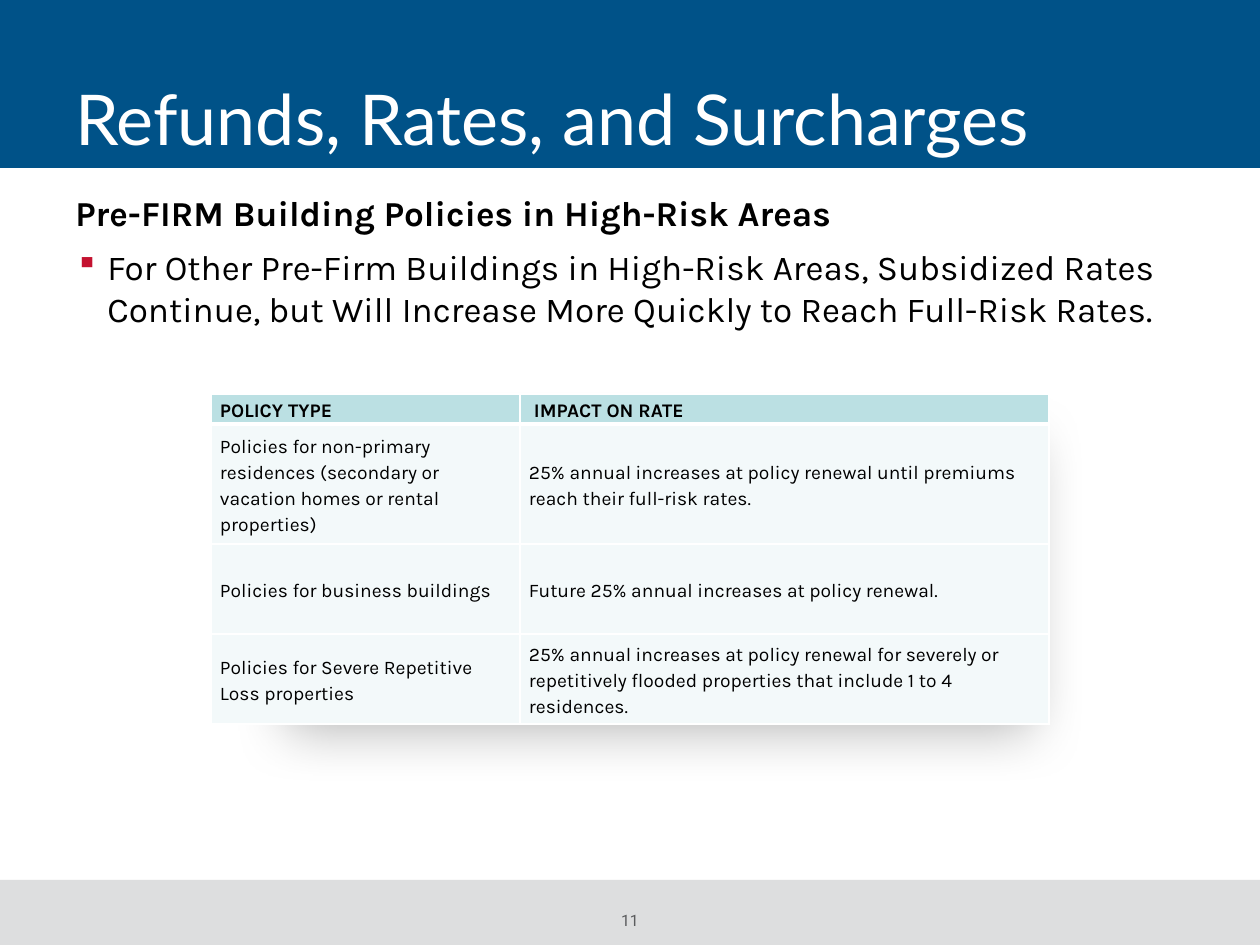
from lxml.etree import SubElement
from pptx import Presentation
from pptx.dml.color import RGBColor
from pptx.enum.shapes import MSO_SHAPE as Shape
from pptx.enum.text import MSO_ANCHOR as Anchor, PP_ALIGN as Align
from pptx.oxml import parse_xml
from pptx.oxml.ns import nsdecls, qn
from pptx.util import Emu, Pt

SCALE = 914400 / 126  # EMU per px
THEME = {
    "blue": "005288", "grey": "DDDEDF", "white": "FFFFFF", "black": "000000",
    "red": "C41230", "page": "5B5C5E", "head": "BBE0E3", "row": "F3F9FA",
    "title_size": 40, "body_size": 20, "cell_size": 11, "page_size": 9,
    "title_font": "Lato", "body_font": "Karla", "page_font": "Roboto",
}


def px(*values):
    return [Emu(round(value * SCALE)) for value in values]


def write(paragraph, text, role, color, bold=False, **formats):
    run = paragraph.add_run()
    run.text = text
    font = {"name": THEME[role + "_font"], "bold": bold,
            "size": Pt(THEME[role + "_size"])}
    if role == "cell":
        font["name"] = THEME["body_font"]
    for key, value in font.items():
        setattr(run.font, key, value)
    run.font.color.rgb = RGBColor.from_string(THEME[color])
    for key, value in formats.items():
        setattr(paragraph, key, value)


THEME["cell_font"] = THEME["body_font"]
prs = Presentation()
prs.slide_width, prs.slide_height = px(1260, 945)
slide = prs.slides.add_slide(prs.slide_layouts[6])
shapes = slide.shapes

# Footer band, title band and the panel behind the table
for box, color in [((0, 880, 1260, 65), "grey"), ((0, 0, 1260, 168), "blue"),
                   ((211, 399, 838, 325), "white")]:
    panel = shapes.add_shape(Shape.RECTANGLE, *px(*box))
    panel.shadow.inherit = False
    panel.fill.solid()
    panel.fill.fore_color.rgb = RGBColor.from_string(THEME[color])
    panel.line.fill.background()

# Soft shadow under the table panel
effects = panel.element.spPr.find(qn("a:effectLst"))
effects.append(parse_xml(
    f'<a:outerShdw {nsdecls("a")} blurRad="{Pt(32)}" dist="{Pt(17.5)}" '
    'dir="900000" sx="89000" sy="89000" algn="b" rotWithShape="0">'
    f'<a:srgbClr val="{THEME["black"]}"><a:alpha val="28000"/></a:srgbClr>'
    '</a:outerShdw>'))

# Policy table
policies = [
    ("POLICY TYPE", "IMPACT ON RATE"),
    ("Policies for non-primary residences (secondary or vacation homes or "
     "rental properties)",
     "25% annual increases at policy renewal until premiums reach their "
     "full-risk rates."),
    ("Policies for business buildings",
     "Future 25% annual increases at policy renewal."),
    ("Policies for Severe Repetitive Loss properties",
     "25% annual increases at policy renewal for severely or repetitively "
     "flooded properties that include 1 to 4 residences."),
]
table = shapes.add_table(4, 2, *px(211, 394, 838, 330)).table
table.first_row = table.horz_banding = False
for column, width in zip(table.columns, px(309, 529)):
    column.width = width
for row, height in zip(table.rows, px(30, 120, 90, 90)):
    row.height = height

for r, texts in enumerate(policies):
    for c, text in enumerate(texts):
        cell = table.cell(r, c)
        header = r == 0
        left = 14 if header and c == 1 else 9
        margins = dict(zip(
            ("margin_left", "margin_top", "margin_right", "margin_bottom"),
            px(left, 1, 9, 0)))
        for key, value in {**margins, "vertical_anchor": Anchor.MIDDLE}.items():
            setattr(cell, key, value)
        cell_props = cell._tc.get_or_add_tcPr()
        for side in "LRTB":
            thick = (r, side) in [(0, "B"), (1, "T")]
            border = SubElement(cell_props, qn("a:ln" + side),
                                w=str(Pt(3 if thick else 1)))
            fill = SubElement(border, qn("a:solidFill"))
            SubElement(fill, qn("a:srgbClr"), val=THEME["white"])
        cell.fill.solid()
        cell.fill.fore_color.rgb = RGBColor.from_string(
            THEME["head" if header else "row"])
        write(cell.text_frame.paragraphs[0], text, "cell", "black", header,
              line_spacing=1.15, space_after=Pt(10))

# Title, body and page number frames
frames = []
for box, anchor in [((63, 6, 1134, 159), Anchor.BOTTOM),
                    ((63, 185, 1134, 680), Anchor.TOP),
                    ((525, 911, 210, 19), Anchor.TOP)]:
    frame = shapes.add_textbox(*px(*box)).text_frame
    frame.word_wrap = True
    frame.vertical_anchor = anchor
    frames.append(frame)
title, body, page = frames

write(title.paragraphs[0], "Refunds, Rates, and Surcharges", "title", "white",
      line_spacing=0.8)
write(body.paragraphs[0], "Pre-FIRM Building Policies in High-Risk Areas",
      "body", "black", True)

# Bulleted statement
statement = body.add_paragraph()
indent, = px(32)
props = statement._p.get_or_add_pPr()
props.set("marL", str(indent))
props.set("indent", str(-indent))
bullet_color = SubElement(props, qn("a:buClr"))
SubElement(bullet_color, qn("a:srgbClr"), val=THEME["red"])
SubElement(props, qn("a:buSzPct"), val="90000")
SubElement(props, qn("a:buChar"), char="▪")
write(statement,
      "For Other Pre-Firm Buildings in High-Risk Areas, Subsidized Rates "
      "Continue, but Will Increase More Quickly to Reach Full-Risk Rates.",
      "body", "black", space_before=Pt(7))

# Page number
for side in ("left", "top", "right", "bottom"):
    setattr(page, "margin_" + side, 0)
write(page.paragraphs[0], "11", "page", "page", alignment=Align.CENTER)

prs.save("out.pptx")
